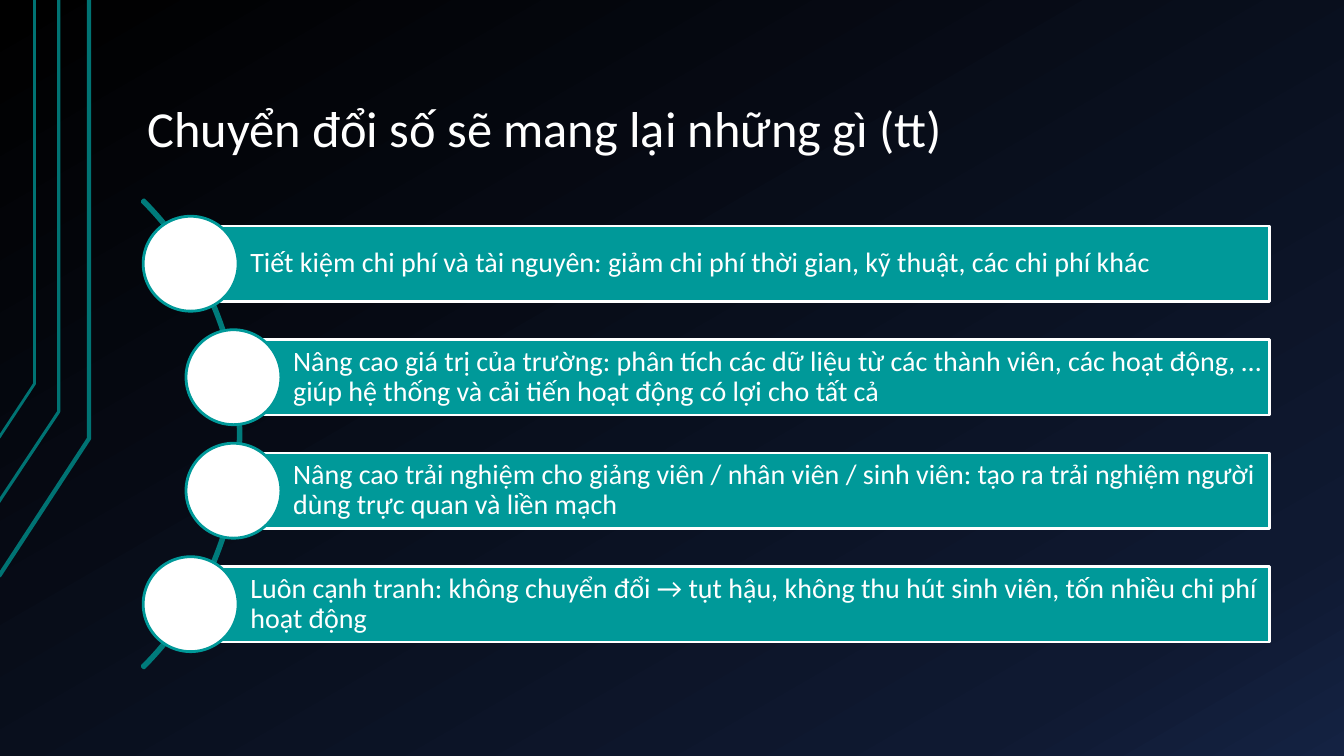
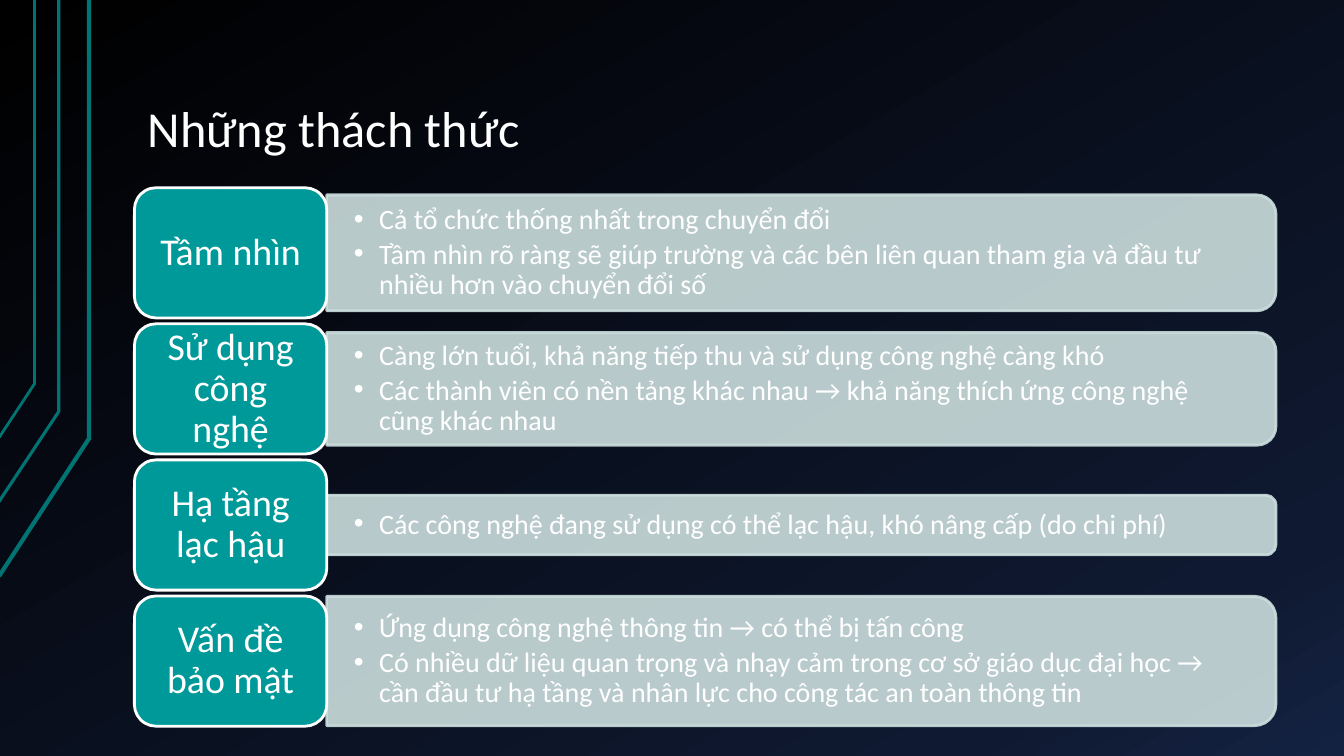
from lxml import etree
from pptx import Presentation
from pptx import util as u
from pptx.dml import color
from pptx.enum import shapes, text
from pptx.oxml import ns

CELL = 76200
COLUMNS, ROWS = 160, 90
FONT = "Calibri"
COLORS = {
    "white": "FFFFFF", "teal": "009999", "trace": "007373", "arc": "007B7B",
    "mist": "CCDEDE", "black": "000000", "navy": "0F1931", "blue": "142242",
}
BACKDROP = [(0, "black"), (85, "navy"), (100, "blue")]
TRACES = [
    (3, [(-0.12, 68.6), (10.6, 52.2), (10.6, 0)]),
    (2.25, [(-0.24, 59.9), (7, 49), (7, 0)]),
    (2, [(-0.12, 52.1), (4.1, 45.7), (4.1, 0)]),
]
MIDDLE, BOTTOM = text.MSO_ANCHOR.MIDDLE, text.MSO_ANCHOR.BOTTOM
LEFT, CENTER = text.PP_ALIGN.LEFT, text.PP_ALIGN.CENTER
FORMATS = {
    "title": dict(size=36, after=0, align=LEFT, anchor=BOTTOM, inset=(0.13, 0.07, 0.13, 0.07)),
    "benefit": dict(size=20, after=7, align=LEFT, anchor=MIDDLE, inset=(0.6, 0.06, 0.06, 0.06)),
    "topic": dict(size=27, after=9, align=CENTER, anchor=MIDDLE, inset=(0.11, 0.06, 0.11, 0.06)),
    "details": dict(size=20, after=3, align=LEFT, anchor=MIDDLE, inset=(0.27, 0.14, 0.27, 0.14)),
}

BENEFITS = [
    "Tiết kiệm chi phí và tài nguyên: giảm chi phí thời gian, kỹ thuật, các chi phí khác",
    "Nâng cao giá trị của trường: phân tích các dữ liệu từ các thành viên, các hoạt động, … "
    "giúp hệ thống và cải tiến hoạt động có lợi cho tất cả",
    "Nâng cao trải nghiệm cho giảng viên / nhân viên / sinh viên: tạo ra trải nghiệm người "
    "dùng trực quan và liền mạch",
    "Luôn cạnh tranh: không chuyển đổi → tụt hậu, không thu hút sinh viên, tốn nhiều chi phí "
    "hoạt động",
]
CHALLENGES = [
    ("Tầm nhìn", 13.8, [
        "Cả tổ chức thống nhất trong chuyển đổi",
        "Tầm nhìn rõ ràng sẽ giúp trường và các bên liên quan tham gia và đầu tư nhiều hơn "
        "vào chuyển đổi số"]),
    ("Sử dụng công nghệ", 13.4, [
        "Càng lớn tuổi, khả năng tiếp thu và sử dụng công nghệ càng khó",
        "Các thành viên có nền tảng khác nhau → khả năng thích ứng công nghệ cũng khác nhau"]),
    ("Hạ tầng lạc hậu", 7.1, [
        "Các công nghệ đang sử dụng có thể lạc hậu, khó nâng cấp (do chi phí)"]),
    ("Vấn đề bảo mật", 15.4, [
        "Ứng dụng công nghệ thông tin → có thể bị tấn công",
        "Có nhiều dữ liệu quan trọng và nhạy cảm trong cơ sở giáo dục đại học → cần đầu tư "
        "hạ tầng và nhân lực cho công tác an toàn thông tin"]),
]


def cells(*values):
    return [u.Emu(round(value * CELL)) for value in values]


def rgb(name):
    return color.RGBColor.from_string(COLORS[name])


def assign(target, values):
    for name, value in values.items():
        setattr(target, name, value)


class Deck:
    def __init__(self):
        self.prs = Presentation()
        self.prs.slide_width, self.prs.slide_height = cells(COLUMNS, ROWS)
        self.slide = None
        self.paint_backdrop()

    def paint_backdrop(self):
        master = self.prs.slide_master
        master.background.fill.gradient()
        gradient = master._element.cSld.find(".//" + ns.qn("a:gradFill"))
        stops = gradient.find(ns.qn("a:gsLst"))
        for old_stop in list(stops):
            stops.remove(old_stop)
        for percent, name in BACKDROP:
            stop = etree.SubElement(stops, ns.qn("a:gs"), pos=str(percent * 1000))
            etree.SubElement(stop, ns.qn("a:srgbClr"), val=COLORS[name])
        direction = gradient.find(ns.qn("a:lin"))
        direction.set("ang", str(60 * 60000))
        direction.set("scaled", "0")

    def new_slide(self, heading):
        self.slide = self.prs.slides.add_slide(self.prs.slide_layouts[5])
        for width, points in TRACES:
            self.trace(width, points)
        title = self.slide.shapes.title
        assign(title, dict(zip(("left", "top", "width", "height"), cells(16, 3.6, 136, 16.1))))
        self.fill_text(title, [heading], "title")

    def trace(self, width, points):
        start, *rest = [cells(*point) for point in points]
        builder = self.slide.shapes.build_freeform(*start)
        builder.add_line_segments(rest, close=False)
        self.dress(builder.convert_to_shape(), None, "trace", width)

    def dress(self, shape, fill, line, width=2, opacity=100):
        shape.shadow.inherit = False
        if fill:
            shape.fill.solid()
            shape.fill.fore_color.rgb = rgb(fill)
        else:
            shape.fill.background()
        shape.line.color.rgb = rgb(line)
        shape.line.width = u.Pt(width)
        if opacity < 100:
            for tint in shape._element.spPr.iter(ns.qn("a:srgbClr")):
                etree.SubElement(tint, ns.qn("a:alpha"), val=str(opacity * 1000))

    def block(self, kind, center, size, fill, line, opacity=100):
        (x, y), (width, height) = center, size
        shape = self.slide.shapes.add_shape(
            kind, *cells(x - width / 2, y - height / 2, width, height))
        self.dress(shape, fill, line, opacity=opacity)
        return shape

    def fill_text(self, shape, lines, style, bullets=False):
        look = FORMATS[style]
        frame = shape.text_frame
        margins = zip(("left", "top", "right", "bottom"), look["inset"])
        assign(frame, {f"margin_{side}": u.Inches(inset) for side, inset in margins})
        assign(frame, dict(word_wrap=True, auto_size=text.MSO_AUTO_SIZE.NONE,
                           vertical_anchor=look["anchor"]))
        for index, line in enumerate(lines):
            paragraph = frame.add_paragraph() if index else frame.paragraphs[0]
            assign(paragraph, dict(alignment=look["align"], line_spacing=0.9,
                                   space_before=u.Pt(0), space_after=u.Pt(look["after"])))
            run = paragraph.add_run()
            run.text = line
            assign(run.font, dict(name=FONT, size=u.Pt(look["size"])))
            run.font.color.rgb = rgb("white")
            if bullets:
                self.bullet(paragraph)

    def bullet(self, paragraph):
        properties = paragraph._p.get_or_add_pPr()
        indent = u.Inches(0.25)
        properties.set("marL", str(indent))
        properties.set("indent", str(-indent))
        etree.SubElement(properties, ns.qn("a:buFont"), typeface="Arial")
        etree.SubElement(properties, ns.qn("a:buChar"), char="•")

    def benefit_arc(self, center, diameter):
        arc = self.block(shapes.MSO_SHAPE.BLOCK_ARC, center, (diameter, diameter), None, "arc")
        for index, value in enumerate((189, 27, 0.004)):
            arc.adjustments[index] = value

    def benefit(self, left, middle, sentence):
        right = 151.1
        band = self.block(shapes.MSO_SHAPE.RECTANGLE, ((left + right) / 2, middle),
                          (right - left, 9), "teal", "white")
        self.fill_text(band, [sentence], "benefit")
        self.block(shapes.MSO_SHAPE.OVAL, (left + 0.1, middle), (11.3, 11.3), "white", "teal")

    def challenge(self, middle, topic, depth, details):
        left, tile_width, panel_width = 16, 22.9, 113
        panel_left = left + tile_width
        panel = self.block(shapes.MSO_SHAPE.ROUND_2_SAME_RECTANGLE,
                           (panel_left + panel_width / 2, middle),
                           (depth, panel_width), "mist", "mist", opacity=90)
        panel.rotation = 90
        notes = self.slide.shapes.add_textbox(
            *cells(panel_left, middle - depth / 2, panel_width - 0.7, depth))
        self.fill_text(notes, details, "details", bullets=True)
        tile = self.block(shapes.MSO_SHAPE.ROUNDED_RECTANGLE,
                          (left + tile_width / 2, middle), (tile_width, 15.5), "teal", "white")
        self.fill_text(tile, [topic], "topic")


def main():
    deck = Deck()

    deck.new_slide("Chuyển đổi số sẽ mang lại những gì (tt)")
    deck.benefit_arc((-10.74, 51.66), 78.84)
    for index, sentence in enumerate(BENEFITS):
        left = 27.7 if index in (1, 2) else 22.6
        deck.benefit(left, 31.4 + 13.51 * index, sentence)

    deck.new_slide("Những thách thức")
    for index, (topic, depth, details) in enumerate(CHALLENGES):
        deck.challenge(30.1 + 16.2 * index, topic, depth, details)

    deck.prs.save("out.pptx")


if __name__ == "__main__":
    main()
